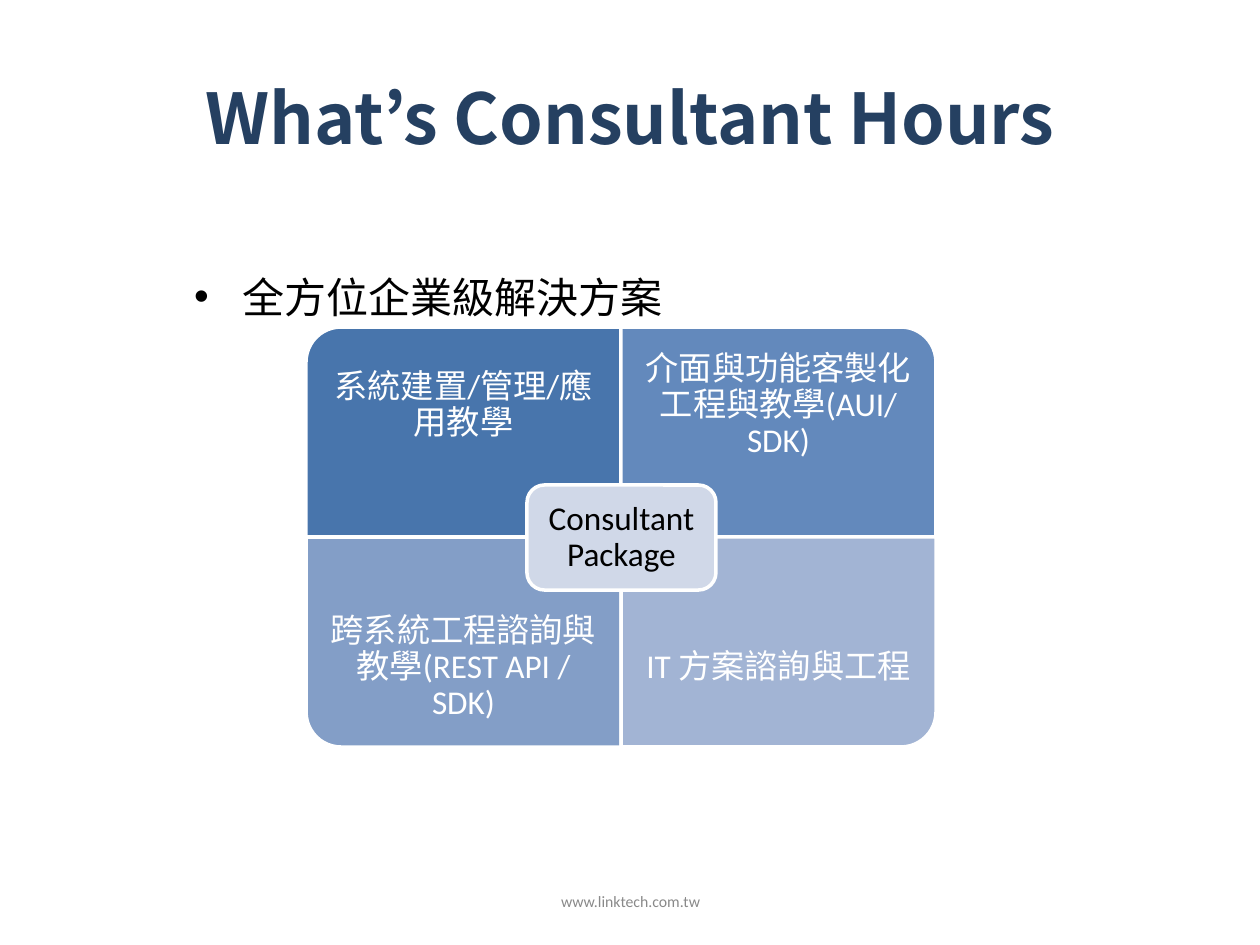
import pptx
import pptx.util
import pptx.dml.color
import pptx.enum.shapes
import pptx.enum.text
import lxml.etree

RGBColor = pptx.dml.color.RGBColor
MSO_SHAPE = pptx.enum.shapes.MSO_SHAPE
MSO_ANCHOR = pptx.enum.text.MSO_ANCHOR
PP_ALIGN = pptx.enum.text.PP_ALIGN
Pt = pptx.util.Pt

NAVY = RGBColor(0x25, 0x40, 0x61)
WHITE = RGBColor(0xFF, 0xFF, 0xFF)
BLACK = RGBColor(0x00, 0x00, 0x00)
GRAY = RGBColor(0x89, 0x89, 0x89)
HUB = RGBColor(0xD0, 0xD8, 0xE8)
BLUE_1 = RGBColor(0x48, 0x75, 0xAC)
BLUE_2 = RGBColor(0x63, 0x89, 0xBC)
BLUE_3 = RGBColor(0x83, 0x9E, 0xC7)
BLUE_4 = RGBColor(0xA2, 0xB4, 0xD4)
CJK = "Noto Sans CJK SC"
PX = 914400 / 126


def add_panel(kind, x, y, w, h, fill, rotation=0):
    sp = s.shapes.add_shape(kind, *[round(v * PX) for v in (x, y, w, h)])
    sp.rotation = rotation
    sp.shadow.inherit = False
    sp.fill.solid()
    sp.fill.fore_color.rgb = fill
    sp.line.color.rgb = WHITE
    sp.line.width = Pt(2)
    return sp


def write(sp, text, size, color, font="Calibri", ea=CJK, inset=(13, 6),
          align=PP_ALIGN.CENTER, spacing=None, wrap=True):
    tf = sp.text_frame
    tf.text = text
    tf.word_wrap = wrap
    tf.vertical_anchor = MSO_ANCHOR.MIDDLE
    tf.margin_left = tf.margin_right = round(inset[0] * PX)
    tf.margin_top = tf.margin_bottom = round(inset[1] * PX)
    p = tf.paragraphs[0]
    p.alignment = align
    p.line_spacing = spacing
    r = p.runs[0]
    r.font.size = Pt(size)
    r.font.name = font
    r.font.color.rgb = color
    latin = r.font._element.find(pptx.oxml.ns.qn("a:latin"))
    east = lxml.etree.Element(pptx.oxml.ns.qn("a:ea"), typeface=ea)
    latin.addnext(east)
    return p


prs = pptx.Presentation()
prs.slide_width = round(1260 * PX)
prs.slide_height = round(945 * PX)
s = prs.slides.add_slide(prs.slide_layouts[6])

sp = s.shapes.add_textbox(*[round(v * PX) for v in (63, 38, 1134, 158)])
p = write(sp, "What’s Consultant Hours", 40, NAVY, "Noto Sans CJK JP", "Noto Sans CJK JP")
p.runs[0].font.bold = True

LEFT, TOP, W, H, TEXT_H = 306, 327, 315, 210, 158
quadrants = [
    (0, 0, 270, BLUE_1, "系統建置/管理/應用教學"),
    (1, 0, 0, BLUE_2, "介面與功能客製化工程與教學(AUI/SDK)"),
    (0, 1, 180, BLUE_3, "跨系統工程諮詢與教學(REST API / SDK)"),
    (1, 1, 90, BLUE_4, "IT 方案諮詢與工程"),
]
for col, row, rotation, fill, text in quadrants:
    x, y = LEFT + col * W, TOP + row * H
    w, h = (H, W) if rotation in (90, 270) else (W, H)
    add_panel(MSO_SHAPE.ROUND_1_RECTANGLE, x + (W - w) / 2, y + (H - h) / 2, w, h, fill, rotation)
    text_y = y + row * (H - TEXT_H)
    sp = s.shapes.add_textbox(*[round(v * PX) for v in (x, text_y, W, TEXT_H)])
    write(sp, text, 19, WHITE, inset=(19, 19), spacing=0.9)

sp = add_panel(MSO_SHAPE.ROUNDED_RECTANGLE, 527, 485, 189, 105, HUB)
write(sp, "Consultant Package", 19, BLACK, inset=(10, 10), spacing=0.9)

sp = s.shapes.add_textbox(*[round(v * PX) for v in (181, 265, 498, 63)])
p = write(sp, "全方位企業級解決方案", 24, BLACK, CJK, align=PP_ALIGN.LEFT, wrap=False)
pPr = p._p.get_or_add_pPr()
pPr.set("marL", str(round(48 * PX)))
pPr.set("indent", str(round(-48 * PX)))
lxml.etree.SubElement(pPr, pptx.oxml.ns.qn("a:buFont"), typeface="Arial")
lxml.etree.SubElement(pPr, pptx.oxml.ns.qn("a:buChar"), char="•")

sp = s.shapes.add_textbox(*[round(v * PX) for v in (431, 876, 399, 50)])
write(sp, "www.linktech.com.tw", 9, GRAY)

prs.save("out.pptx")
